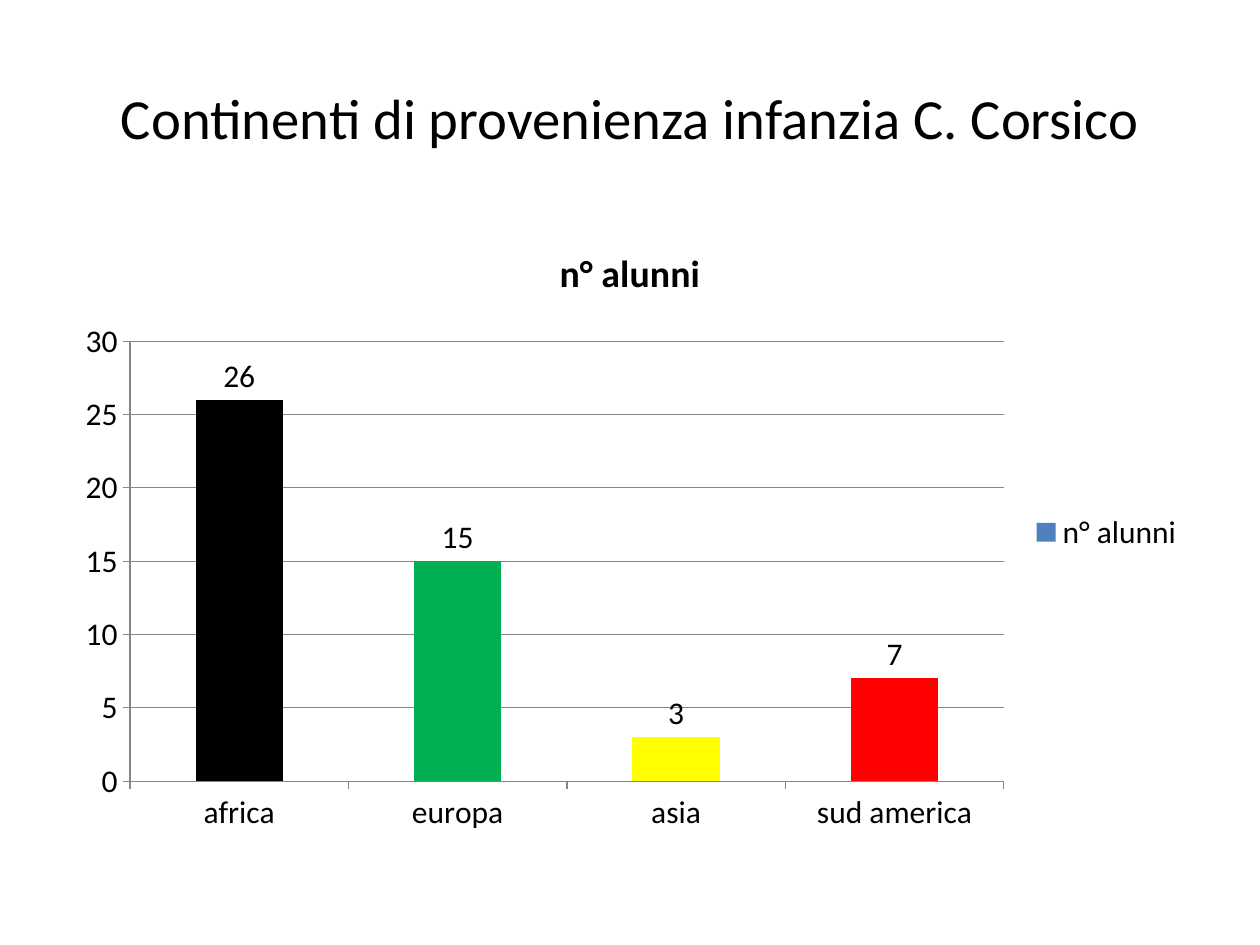
from dataclasses import dataclass

from pptx import Presentation
from pptx.chart.data import CategoryChartData
from pptx.dml.color import RGBColor
from pptx.enum.chart import XL_CHART_TYPE as ChartType
from pptx.enum.chart import XL_LABEL_POSITION as LabelPosition
from pptx.enum.chart import XL_LEGEND_POSITION as LegendPosition
from pptx.enum.chart import XL_TICK_MARK as TickMark
from pptx.enum.text import MSO_ANCHOR as Anchor
from pptx.enum.text import PP_ALIGN as Align
from pptx.util import Inches, Pt


@dataclass(frozen=True)
class Theme:
    font: str = "Calibri"
    text: str = "000000"
    series: str = "4F81BD"
    line: str = "868686"
    title_size: float = 32.4
    chart_title_size: float = 21.6
    chart_size: float = 18


@dataclass(frozen=True)
class Continent:
    name: str
    pupils: int
    color: str


THEME = Theme()
SERIES_NAME = "n° alunni"
CONTINENTS = [
    Continent("africa", 26, "000000"),
    Continent("europa", 15, "00B050"),
    Continent("asia", 3, "FFFF00"),
    Continent("sud america", 7, "FF0000"),
]


def style_font(font, *, size: float, bold: bool = False) -> None:
    font.name = THEME.font
    font.size = Pt(size)
    font.bold = bold
    font.color.rgb = RGBColor.from_string(THEME.text)


def write_text(frame, text: str, *, size: float, bold: bool = False) -> None:
    para = frame.paragraphs[0]
    para.alignment = Align.CENTER
    span = para.add_run()
    span.text = text
    style_font(span.font, size=size, bold=bold)


def style_line(line) -> None:
    line.color.rgb = RGBColor.from_string(THEME.line)
    line.width = Pt(0.75)


def fill_solid(fill, color: str) -> None:
    fill.solid()
    fill.fore_color.rgb = RGBColor.from_string(color)


def add_title(page, text: str) -> None:
    box = page.shapes.title
    box.left, box.top = Inches(0.5), Inches(0.3)
    box.width, box.height = Inches(9), Inches(1.25)
    box.text_frame.vertical_anchor = Anchor.MIDDLE
    write_text(box.text_frame, text, size=THEME.title_size)


def add_pupil_chart(page, continents: list[Continent]) -> None:
    data = CategoryChartData()
    data.categories = [continent.name for continent in continents]
    data.add_series(SERIES_NAME, [continent.pupils for continent in continents])
    chart = page.shapes.add_chart(
        ChartType.COLUMN_CLUSTERED,
        Inches(0.5), Inches(1.75), Inches(9), Inches(4.95), data,
    ).chart
    style_font(chart.font, size=THEME.chart_size)
    write_text(chart.chart_title.text_frame, SERIES_NAME,
               size=THEME.chart_title_size, bold=True)
    chart.chart_title.include_in_layout = False
    chart.has_legend = True
    chart.legend.position = LegendPosition.RIGHT
    chart.legend.include_in_layout = False

    for axis in (chart.category_axis, chart.value_axis):
        axis.major_tick_mark = TickMark.OUTSIDE
        axis.minor_tick_mark = TickMark.NONE
        style_line(axis.format.line)
    scale = chart.value_axis
    scale.minimum_scale, scale.maximum_scale, scale.major_unit = 0, 30, 5
    scale.has_major_gridlines = True
    style_line(scale.major_gridlines.format.line)

    plot = chart.plots[0]
    plot.vary_by_categories = False
    plot.gap_width = 150
    series = plot.series[0]
    fill_solid(series.format.fill, THEME.series)
    for index, continent in enumerate(continents):
        fill_solid(series.points[index].format.fill, continent.color)
    labels = series.data_labels
    labels.show_value = True
    labels.position = LabelPosition.OUTSIDE_END
    style_font(labels.font, size=THEME.chart_size)


def main() -> None:
    """Build the slide on pupils' continents of origin and save it."""
    deck = Presentation()
    deck.slide_width, deck.slide_height = Inches(10), Inches(7.5)
    page = deck.slides.add_slide(deck.slide_layouts[5])
    add_title(page, "Continenti di provenienza infanzia C. Corsico")
    add_pupil_chart(page, CONTINENTS)
    deck.save("out.pptx")


if __name__ == "__main__":
    main()
